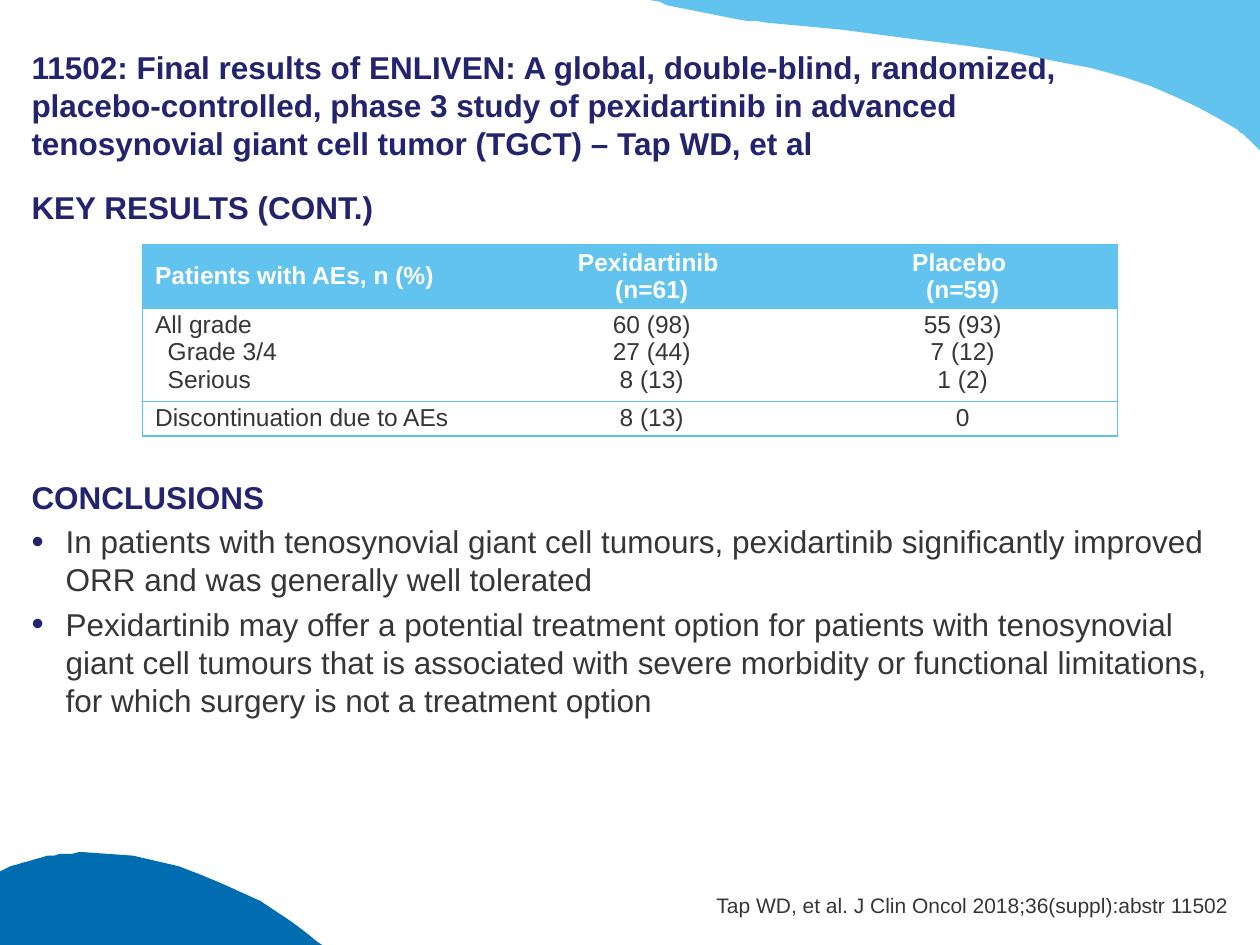
from pptx import Presentation
from pptx.dml.color import RGBColor as RGB
from pptx.enum.text import MSO_ANCHOR as Anchor, MSO_AUTO_SIZE as Fit, PP_ALIGN as Align
from pptx.oxml import parse_xml
from pptx.oxml.ns import nsdecls
from pptx.util import Pt

NAVY = RGB(0x23, 0x24, 0x6D)
GREY = RGB(0x36, 0x36, 0x36)
SKY = RGB(0x62, 0xC4, 0xEE)
EDGE = RGB(0x5C, 0xC1, 0xEC)
BLUE = RGB(0x00, 0x6D, 0xB0)
WHITE = RGB(0xFF, 0xFF, 0xFF)

TITLE = ("11502: Final results of ENLIVEN: A global, double-blind, randomized, "
         "placebo-controlled, phase 3 study of pexidartinib in advanced "
         "tenosynovial giant cell tumor (TGCT) – Tap WD, et al")
POINTS = [
    "In patients with tenosynovial giant cell tumours, pexidartinib significantly "
    "improved ORR and was generally well tolerated",
    "Pexidartinib may offer a potential treatment option for patients with "
    "tenosynovial giant cell tumours that is associated with severe morbidity or "
    "functional limitations, for which surgery is not a treatment option",
]
SOURCE = "Tap WD, et al. J Clin Oncol 2018;36(suppl):abstr 11502"
ROWS = [
    ["Patients with AEs, n (%)", "Pexidartinib \n(n=61)", "Placebo \n(n=59)"],
    ["All grade\nGrade 3/4\nSerious", "60 (98)\n27 (44)\n8 (13)", "55 (93)\n7 (12)\n1 (2)"],
    ["Discontinuation due to AEs", "8 (13)", "0"],
]


def style(para, size, color, bold=False):
    for run in para.runs:
        font = run.font
        font.name, font.size, font.bold = "Arial", Pt(size), bold
        font.color.rgb = color


def place(shape, box):
    shape.left, shape.top, shape.width, shape.height = map(Pt, box)


def set_frame(frame, anchor, pads, wrap=True):
    frame.auto_size = Fit.NONE
    frame.word_wrap = wrap
    frame.vertical_anchor = anchor
    (frame.margin_left, frame.margin_top,
     frame.margin_right, frame.margin_bottom) = map(Pt, pads)


def curve(start, steps, count=12):
    """Points along joined cubic curves; each step is two handles and an end."""
    pts = [start]
    for step in steps:
        ctrl = (pts[-1], *step)
        for i in range(1, count + 1):
            t = i / count
            mix = ((1 - t) ** 3, 3 * t * (1 - t) ** 2, 3 * t * t * (1 - t), t ** 3)
            pts.append(tuple(sum(m * c[k] for m, c in zip(mix, ctrl)) for k in (0, 1)))
    return pts


def add_wave(slide, pts, color):
    pen = slide.shapes.build_freeform(*pts[0], scale=Pt(1))
    pen.add_line_segments(pts[1:])
    wave = pen.convert_to_shape()
    wave.shadow.inherit = False
    wave.fill.solid()
    wave.fill.fore_color.rgb = color
    wave.line.fill.background()


def add_waves(slide, box):
    x, y, w, h = box
    right, foot = x + w, y + h
    top = curve((right - 5, y + 80.6), [
        ((right - 8, y + 78.5), (right - 10, y + 76.5), (right - 13, y + 74.2)),
        ((right - 59.8, y + 44.6), (right - 98, y + 31), (right - 282, y + 13)),
        ((right - 304.6, y + 10.8), (right - 325, y + 6.5), (right - 343.4, y + 1.4)),
    ])
    add_wave(slide, [(right - 349, y), (right, y), (right, y + 85.7)] + top, SKY)
    low = curve((x + 6.5, foot - 44.6), [
        ((x + 20.2, foot - 49.7), (x + 34.6, foot - 52.6), (x + 48.2, foot - 52.6)),
        ((x + 104.4, foot - 54), (x + 157, foot - 22.3), (x + 181.4, foot - 2.2)),
    ])
    add_wave(slide, [(x, foot), (x, foot - 41.8)] + low + [(x + 183.6, foot)], BLUE)


def add_title(slide, box):
    title = slide.shapes.title
    place(title, box)
    set_frame(title.text_frame, Anchor.BOTTOM, (0, 3.6, 0, 0))
    title.text_frame.text = TITLE
    para = title.text_frame.paragraphs[0]
    para.alignment = Align.LEFT
    style(para, 18, NAVY, True)


def add_body(slide, box):
    body = slide.placeholders[1]
    place(body, box)
    frame = body.text_frame
    set_frame(frame, Anchor.TOP, (0, 3.6, 0, 3.6))
    heads = ["KEY RESULTS (CONT.)", "CONCLUSIONS"]
    frame.text = "\n".join(heads + POINTS)
    for para in frame.paragraphs:
        head = para.text in heads
        para.space_before, para.space_after = Pt(0), Pt(4)
        style(para, 18, NAVY if head else GREY, head)
        props = para._p.get_or_add_pPr()
        indent = 0 if head else Pt(19.5)
        props.set("marL", str(indent))
        props.set("indent", str(-indent))
        marks = ["<a:buNone {}/>"] if head else [
            f'<a:buClr {{}}><a:srgbClr val="{NAVY}"/></a:buClr>',
            '<a:buSzPct {} val="110000"/>',
            '<a:buFont {} typeface="Arial"/>',
            '<a:buChar {} char="•"/>']
        for mark in marks:
            props.append(parse_xml(mark.format(nsdecls("a"))))
    # Room for the table
    frame.paragraphs[1].space_before = Pt(140)


def set_edges(cell, sides):
    props = cell._tc.get_or_add_tcPr()
    for i, side in enumerate("LRTB"):
        paint = (f'<a:solidFill><a:srgbClr val="{EDGE}"/></a:solidFill>'
                 if side in sides else "<a:noFill/>")
        props.insert(i, parse_xml(f'<a:ln{side} {nsdecls("a")} w="9525">{paint}</a:ln{side}>'))


def add_grid(slide, box):
    table = slide.shapes.add_table(3, 3, *map(Pt, box)).table
    table.horz_banding = False
    for col, width in zip(table.columns, (201.6, 178.8, 176.6)):
        col.width = Pt(width)
    for row, height in zip(table.rows, (36.6, 53.4, 19.5)):
        row.height = Pt(height)
    for r, texts in enumerate(ROWS):
        for c, text in enumerate(texts):
            cell = table.cell(r, c)
            cell.text = text
            cell.margin_left = cell.margin_right = Pt(7.2)
            cell.margin_top = cell.margin_bottom = Pt(1.4)
            cell.vertical_anchor = Anchor.TOP if r else Anchor.MIDDLE
            if r:
                cell.fill.background()
            else:
                cell.fill.solid()
                cell.fill.fore_color.rgb = SKY
            set_edges(cell, "TB" + {0: "L", 2: "R"}.get(c, ""))
            for i, para in enumerate(cell.text_frame.paragraphs):
                para.alignment = Align.CENTER if c else Align.LEFT
                style(para, 14, GREY if r else WHITE, not r)
                if r and i and not c:
                    para._p.get_or_add_pPr().set("marL", str(Pt(7.2)))


def add_source(slide, box):
    note = slide.shapes.add_textbox(*map(Pt, box))
    set_frame(note.text_frame, Anchor.BOTTOM, (0, 0, 0, 0), wrap=False)
    note.text_frame.text = SOURCE
    para = note.text_frame.paragraphs[0]
    para.alignment = Align.RIGHT
    style(para, 12, GREY)


def main():
    deck = Presentation()
    deck.slide_width, deck.slide_height = Pt(720), Pt(540)
    slide = deck.slides.add_slide(deck.slide_layouts[1])
    add_waves(slide, (0, 0, 720, 540))
    add_title(slide, (18, 18, 613.4, 74.2))
    add_body(slide, (18, 103.7, 684, 418.3))
    add_grid(slide, (81.4, 139.7, 557, 109.5))
    add_source(slide, (407.5, 509.8, 294.5, 14.4))
    deck.save("out.pptx")


if __name__ == "__main__":
    main()
